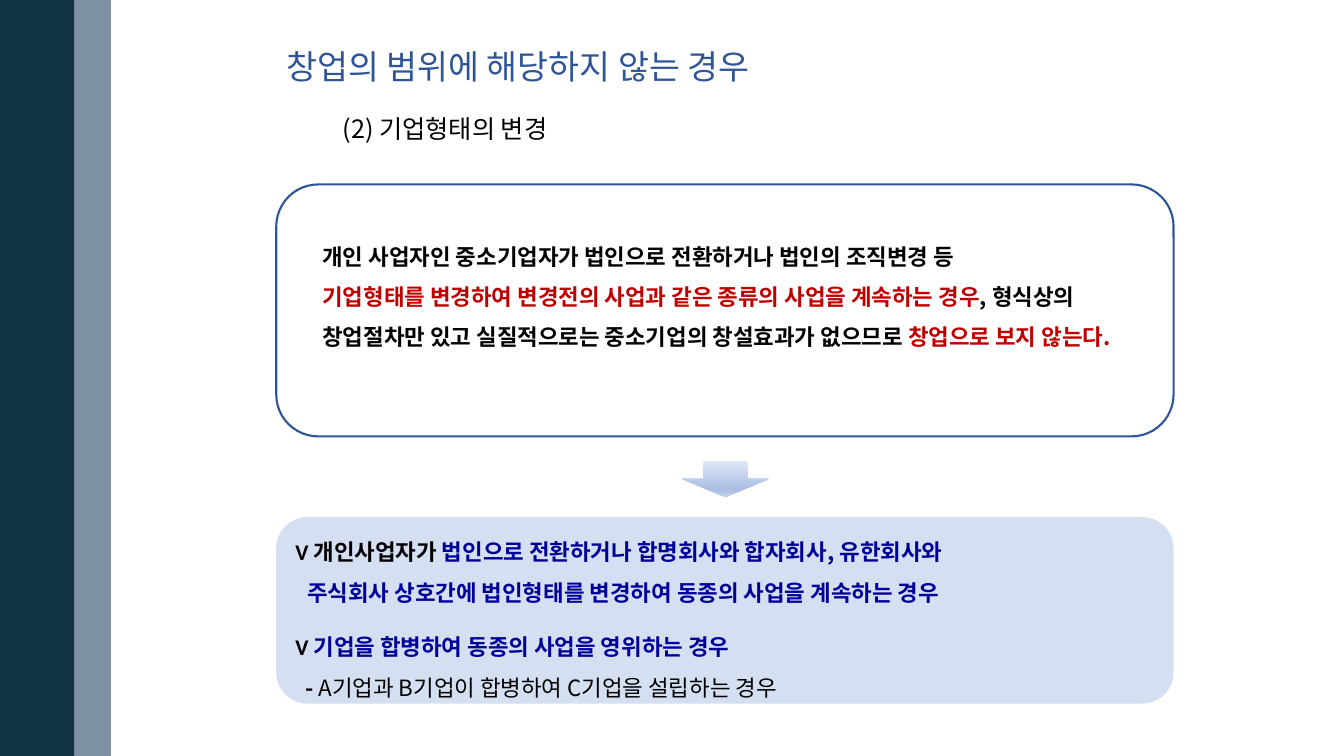
from lxml.etree import SubElement
from pptx import Presentation
from pptx.dml.color import RGBColor
from pptx.enum.shapes import MSO_SHAPE
from pptx.enum.text import MSO_ANCHOR, PP_ALIGN
from pptx.oxml.ns import qn
from pptx.util import Inches, Pt

KOREAN = "Noto Sans CJK KR"
NAVY, SLATE, BLUE = "113245", "7E91A2", "2F5597"
BLACK, RED, INDIGO, PALE = "000000", "C00000", "000099", "B4C7E7"
ARROW_STOPS = [(0, "E1E8F6"), (74, "ABC0E4"), (83, "ABC0E4"), (100, "C7D5ED")]


def color(value):
    return RGBColor.from_string(value)


def apply(target, values):
    """Set each named attribute of the target."""
    for name, value in values.items():
        setattr(target, name, value)


def place(shape, left, top, width, height):
    apply(shape, {"left": Inches(left), "top": Inches(top),
                  "width": Inches(width), "height": Inches(height)})


def add_span(para, text, size, tint=BLACK, bold=False, latin=KOREAN):
    span = para.add_run()
    span.text = text
    apply(span.font, {"size": Pt(size), "bold": bold, "name": latin})
    span.font.color.rgb = color(tint)
    SubElement(span._r.get_or_add_rPr(), qn("a:ea"), typeface=KOREAN)


def format_frame(frame, anchor=MSO_ANCHOR.TOP, wrap=True, **margins):
    apply(frame, {"vertical_anchor": anchor, "word_wrap": wrap})
    apply(frame, {f"margin_{side}": Inches(size) for side, size in margins.items()})


def format_para(para, spacing, before=0, indent=0):
    apply(para, {"alignment": PP_ALIGN.LEFT, "line_spacing": Pt(spacing),
                 "space_before": Pt(before)})
    para._p.get_or_add_pPr().set("marL", str(Inches(indent)))
    para._p.get_or_add_pPr().set("indent", "0")


def add_figure(page, kind, bounds, fill=None, line=None, alpha=None):
    shape = page.shapes.add_shape(kind, *map(Inches, bounds))
    shape.shadow.inherit = False
    if fill:
        shape.fill.solid()
        shape.fill.fore_color.rgb = color(fill)
    else:
        shape.fill.background()
    if alpha:
        tint = shape._element.spPr.find(qn("a:solidFill"))[0]
        SubElement(tint, qn("a:alpha"), val=str(alpha * 1000))
    if line:
        shape.line.color.rgb = color(line)
        shape.line.width = Pt(1.5)
    else:
        shape.line.fill.background()
    return shape


def add_gradient(shape, stops):
    shape.fill.gradient()
    shape.fill.gradient_angle = 270
    stop_list = shape._element.spPr.find(qn("a:gradFill")).find(qn("a:gsLst"))
    for old_stop in list(stop_list):
        stop_list.remove(old_stop)
    for position, tint in stops:
        stop = SubElement(stop_list, qn("a:gs"), pos=str(position * 1000))
        SubElement(stop, qn("a:srgbClr"), val=tint)


def add_title(page, text):
    title = page.shapes.title
    place(title, 2.74, 0.15, 8.94, 1.05)
    format_frame(title.text_frame, MSO_ANCHOR.MIDDLE)
    para = title.text_frame.paragraphs[0]
    format_para(para, 26)
    add_span(para, text, 24, BLUE)


def add_subtitle(page, text):
    box = page.shapes.add_textbox(*map(Inches, (3.3, 1.1, 2.53, 0.37)))
    format_frame(box.text_frame, wrap=False)
    para = box.text_frame.paragraphs[0]
    format_para(para, 19.5)
    add_span(para, text, 18)


def add_definition(page, parts):
    box = page.shapes.add_textbox(*map(Inches, (3.1, 2.21, 8.18, 1.72)))
    format_frame(box.text_frame, top=0.07, right=0)
    para = box.text_frame.paragraphs[0]
    format_para(para, 28.6)
    for text, tint in parts:
        if text is None:
            para.add_line_break()
        else:
            add_span(para, text, 16, tint, True)


def add_cases(panel, cases):
    frame = panel.text_frame
    format_frame(frame, MSO_ANCHOR.MIDDLE, top=0.04, bottom=0)
    for number, (before, indent, parts) in enumerate(cases):
        para = frame.add_paragraph() if number else frame.paragraphs[0]
        format_para(para, 29.3, before, indent)
        for text, tint, bold, latin in parts:
            add_span(para, text, 16, tint, bold, latin)


def main():
    deck = Presentation()
    apply(deck, {"slide_width": Inches(13.33), "slide_height": Inches(7.5)})
    page = deck.slides.add_slide(deck.slide_layouts[5])
    add_figure(page, MSO_SHAPE.RECTANGLE, (0, 0, 0.74, 7.5), NAVY)
    add_figure(page, MSO_SHAPE.RECTANGLE, (0.74, 0, 0.36, 7.5), SLATE)

    add_title(page, "창업의 범위에 해당하지 않는 경우")
    add_subtitle(page, "(2) 기업형태의 변경")

    add_figure(page, MSO_SHAPE.ROUNDED_RECTANGLE, (2.74, 1.83, 8.9, 2.5), line=BLUE)
    add_definition(page, [
        ("개인 사업자인 중소기업자가 법인으로 전환하거나 법인의 조직변경 등", BLACK),
        (None, None),
        ("기업형태를 변경하여 변경전의 사업과 같은 종류의 사업을 계속하는 경우", RED),
        (", 형식상의 창업절차만 있고 실질적으로는 중소기업의 창설효과가 없으므로 ", BLACK),
        ("창업으로 보지 않는다.", RED),
    ])

    arrow = add_figure(page, MSO_SHAPE.DOWN_ARROW, (6.76, 4.57, 0.87, 0.36))
    add_gradient(arrow, ARROW_STOPS)

    panel = add_figure(page, MSO_SHAPE.ROUNDED_RECTANGLE, (2.74, 5.13, 8.9, 1.85),
                       PALE, alpha=56)
    check = ("V ", BLACK, True, "Calibri")
    add_cases(panel, [
        (0, 0, [check, ("개인사업자가 ", BLACK, True, KOREAN),
                ("법인으로 전환하거나 합명회사와 합자회사, 유한회사와", INDIGO, True, KOREAN)]),
        (0, 0.12, [("주식회사 상호간에 법인형태를 변경하여 동종의 사업을 계속하는 경우",
                    INDIGO, True, KOREAN)]),
        (9, 0, [check, ("기업을 합병하여 동종의 사업을 영위하는 경우", INDIGO, True, KOREAN)]),
        (0, 0.1, [("- ", BLACK, True, KOREAN),
                  ("A기업과 B기업이 합병하여 C기업을 설립하는 경우", BLACK, False, KOREAN)]),
    ])
    deck.save("out.pptx")


if __name__ == "__main__":
    main()
